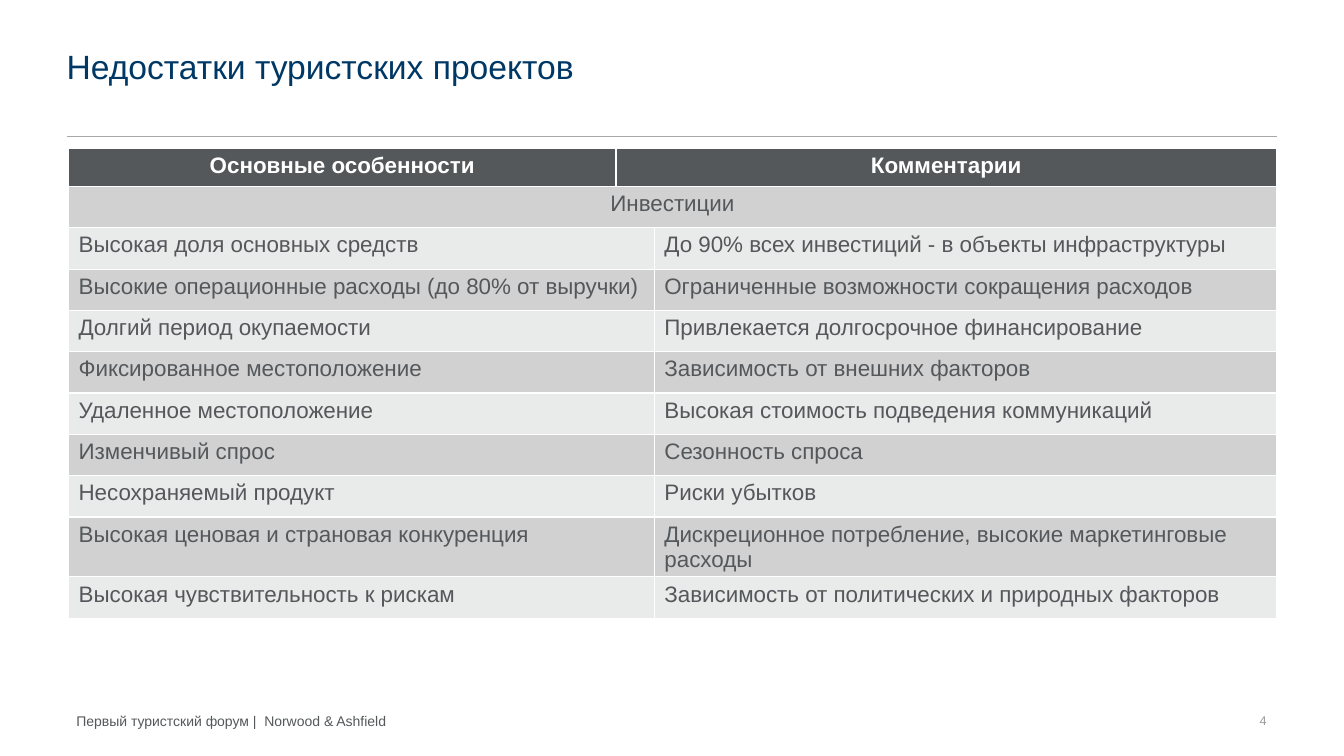
from lxml.etree import SubElement
from pptx import Presentation
from pptx.dml.color import RGBColor
from pptx.enum.shapes import MSO_CONNECTOR
from pptx.enum.text import MSO_ANCHOR, MSO_AUTO_SIZE, PP_ALIGN
from pptx.oxml.ns import qn
from pptx.util import Inches, Pt

COLORS = {
    "title": "003865",
    "text": "54585A",
    "head": "54585A",
    "odd": "D1D1D2",
    "even": "E9EAEA",
    "rule": "A7A8AA",
    "number": "999A9B",
    "white": "FFFFFF",
}
WIDTHS = (5.43, 0.38, 6.17)
HEAD = ("Основные особенности", "Комментарии")
GROUP = "Инвестиции"
ROWS = (
    ("Высокая доля основных средств", "До 90% всех инвестиций - в объекты инфраструктуры"),
    ("Высокие операционные расходы (до 80% от выручки)", "Ограниченные возможности сокращения расходов"),
    ("Долгий период окупаемости", "Привлекается долгосрочное финансирование"),
    ("Фиксированное местоположение", "Зависимость от внешних факторов"),
    ("Удаленное местоположение", "Высокая стоимость подведения коммуникаций"),
    ("Изменчивый спрос", "Сезонность спроса"),
    ("Несохраняемый продукт", "Риски убытков"),
    ("Высокая ценовая и страновая конкуренция", "Дискреционное потребление, высокие маркетинговые расходы"),
    ("Высокая чувствительность к рискам", "Зависимость от политических и природных факторов"),
)


def color(name):
    """Return the named palette color."""
    return RGBColor.from_string(COLORS[name])


def write(frame, text, size=16, tint="text", bold=False, align=PP_ALIGN.LEFT):
    """Fill a text frame with one formatted paragraph."""
    line = frame.paragraphs[0]
    line.alignment = align
    run = line.add_run()
    run.text = text
    font = run.font
    font.name, font.size, font.bold = "Arial", Pt(size), bold
    font.color.rgb = color(tint)


def add_title(slide, text, left, top, width, height):
    """Place the title with the rule below it."""
    title = slide.shapes.title
    title.left, title.top = Inches(left), Inches(top)
    title.width, title.height = Inches(width), Inches(height)
    frame = title.text_frame
    frame.auto_size = MSO_AUTO_SIZE.NONE
    frame.vertical_anchor = MSO_ANCHOR.TOP
    frame.margin_left = frame.margin_right = 0
    frame.margin_top = frame.margin_bottom = 0
    write(frame, text, size=24, tint="title")
    level = Inches(top + 0.89)
    rule = slide.shapes.add_connector(
        MSO_CONNECTOR.STRAIGHT, Inches(left), level, Inches(left + 12.01), level)
    rule.line.color.rgb = color("rule")
    rule.line.width = Pt(0.5)
    SubElement(rule._element.spPr, qn("a:effectLst"))


def fill_row(table, row, cells, shade, **style):
    """Write and shade one row, given each cell's first and last column."""
    for first, last, text in cells:
        cell = table.cell(row, first)
        if last > first:
            cell.merge(table.cell(row, last))
        write(cell.text_frame, text, **style)
    for col in range(len(WIDTHS)):
        fill = table.cell(row, col).fill
        fill.solid()
        fill.fore_color.rgb = color(shade)


def add_grid(slide, left, top, width, height):
    """Place the table of drawbacks and comments."""
    table = slide.shapes.add_table(
        len(ROWS) + 2, len(WIDTHS), Inches(left), Inches(top),
        Inches(width), Inches(height)).table
    for col, size in zip(table.columns, WIDTHS):
        col.width = Inches(size)
    for index, row in enumerate(table.rows):
        row.height = Inches(0.41 if index else 0.38)
    center = PP_ALIGN.CENTER
    fill_row(table, 0, [(0, 0, HEAD[0]), (1, 2, HEAD[1])], "head",
             tint="white", bold=True, align=center)
    fill_row(table, 1, [(0, 2, GROUP)], "odd", align=center)
    for index, (trait, note) in enumerate(ROWS, 2):
        shade = "odd" if index % 2 else "even"
        fill_row(table, index, [(0, 1, trait), (2, 2, note)], shade)


def add_note(slide, text, left, top, width, height, anchor=MSO_ANCHOR.TOP, **style):
    """Place a small text box at the foot of the slide."""
    box = slide.shapes.add_textbox(
        Inches(left), Inches(top), Inches(width), Inches(height))
    frame = box.text_frame
    frame.word_wrap = True
    frame.vertical_anchor = anchor
    write(frame, text, **style)


def main():
    """Build and save the slide."""
    deck = Presentation()
    deck.slide_width, deck.slide_height = Inches(13.33), Inches(7.5)
    slide = deck.slides.add_slide(deck.slide_layouts[5])
    add_title(slide, "Недостатки туристских проектов", 0.66, 0.46, 9.01, 0.41)
    add_grid(slide, 0.68, 1.47, 11.98, 4.48)
    add_note(slide, "Первый туристский форум |  Norwood & Ashfield",
             0.66, 7.02, 5.43, 0.27, size=10)
    add_note(slide, "4", 11.78, 6.95, 0.88, 0.4, anchor=MSO_ANCHOR.MIDDLE,
             size=9, tint="number", align=PP_ALIGN.RIGHT)
    deck.save("out.pptx")


if __name__ == "__main__":
    main()
